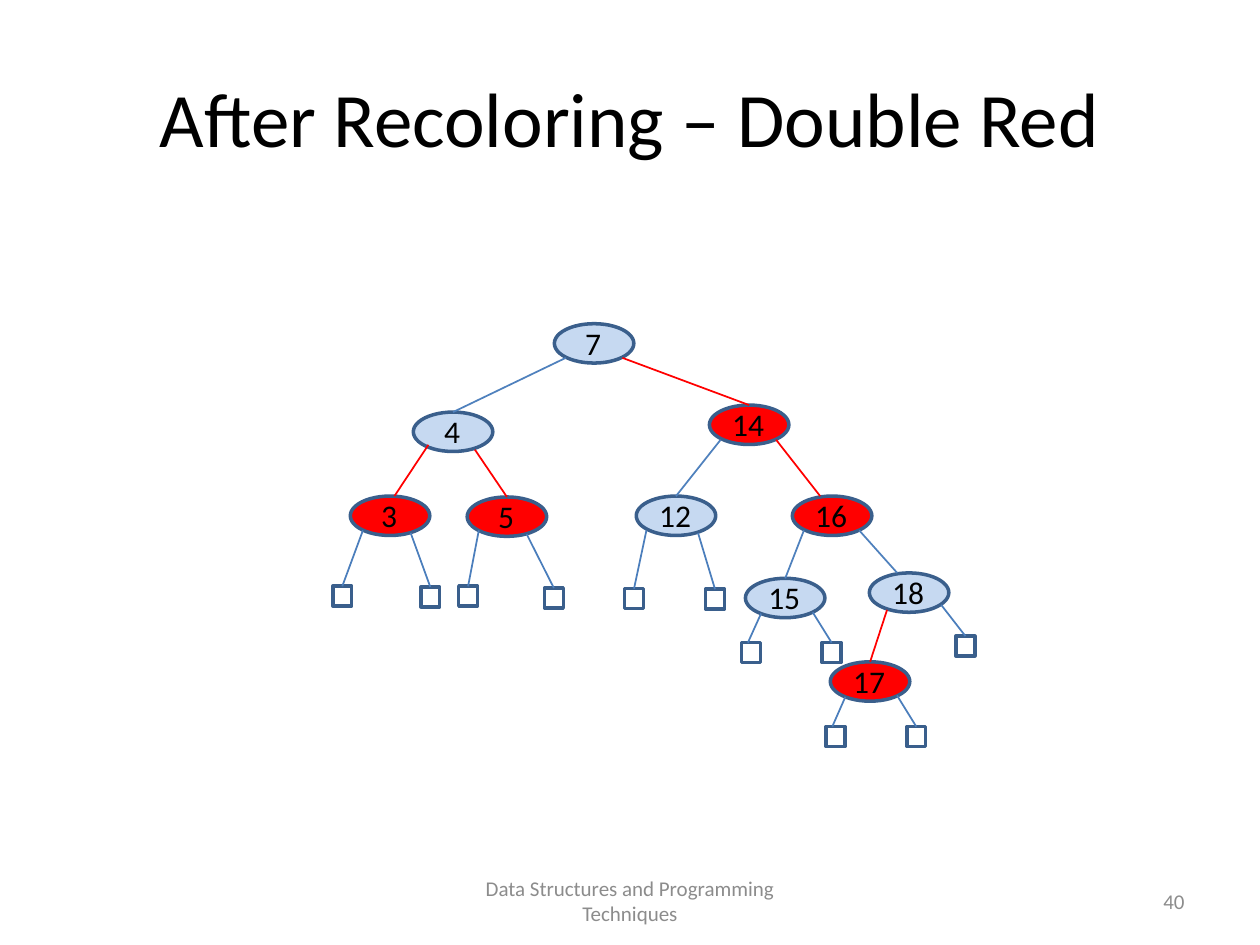
from pptx import Presentation
from pptx.dml.color import RGBColor
from pptx.enum.shapes import MSO_CONNECTOR, MSO_SHAPE
from pptx.enum.text import MSO_ANCHOR, MSO_AUTO_SIZE, PP_ALIGN
from pptx.oxml.ns import qn
from pptx.util import Pt
from lxml.etree import SubElement

BLACK = RGBColor(0x00, 0x00, 0x00)
GREY = RGBColor(0x8C, 0x8C, 0x8C)
RED = RGBColor(0xFF, 0x00, 0x00)
PALE = RGBColor(0xC6, 0xD9, 0xF1)
OUTLINE = RGBColor(0x3A, 0x5F, 0x8C)
NODE_EDGE = RGBColor(0x4F, 0x81, 0xBD)
LEAF_EDGE = RGBColor(0x4B, 0x7E, 0xBC)

NODE_SIZE = (45.4, 22.5)
LEAF_SIZE = (10.8, 11.4)
LABEL_SIZE = (35.3, 29)
LABEL_SHIFT = (4.5, -3.5)

NODES = {
    7: (316.8, 185), 4: (236.2, 235.5), 14: (405.4, 231.5),
    3: (200.2, 283.5), 5: (267, 284), 12: (363.6, 283.5), 16: (452.8, 283.5),
    15: (426, 330.5), 18: (496.8, 327.4), 17: (474.5, 378.2),
}
RED_NODES = {14, 3, 5, 16, 17}

# parent start point, child node, shift of the end from the child's top centre
NODE_LINKS = [
    ((323.3, 204.5), 4, 0), ((355.7, 204.5), 14, 0),
    ((244.8, 254.2), 3, 2.5), ((271.4, 257), 5, 0),
    ((411.8, 251.3), 12, 0), ((443.5, 251.3), 16, -6.8),
    ((459.4, 303.1), 15, 0), ((491, 303.1), 18, -6.8),
    ((506.9, 348.5), 17, 0),
]
LEAF_LINKS = [
    ((207.4, 303.1), (190.2, 335), 0), ((234.7, 304.6), (240.5, 335.4), 0),
    ((273.6, 303.1), (262.1, 335), 0), ((301, 305.3), (311.1, 336), 0),
    ((369.4, 303.1), (356.9, 336.4), 0), ((398.9, 304.6), (403.2, 336.7), 0),
    ((434.9, 350.6), (423.8, 367.2), -1.8), ((464.4, 349.9), (469.8, 367.2), 0),
    ((537.8, 345.6), (546.3, 363.5), 0),
    ((483.1, 398.2), (472, 415.2), -1.8), ((512.6, 397.4), (518.2, 415.2), 0),
]


def set_all(obj, values):
    for name, value in values.items():
        setattr(obj, name, value)


def write(sp, text, size, color, align, anchor):
    tf = sp.text_frame
    set_all(tf, {"word_wrap": True, "vertical_anchor": anchor})
    p = tf.paragraphs[0]
    p.alignment = align
    r = p.add_run()
    r.text = text
    set_all(r.font, {"name": "Calibri", "size": Pt(size)})
    r.font.color.rgb = color


def add_text(s, box, text, size, color, align, anchor=MSO_ANCHOR.MIDDLE):
    sp = s.shapes.add_textbox(*map(Pt, box))
    write(sp, text, size, color, align, anchor)
    return sp


def add_title(s, text):
    sp = s.shapes.title
    set_all(sp, {"left": Pt(36), "top": Pt(21.6), "width": Pt(648), "height": Pt(90)})
    write(sp, text, 44, BLACK, PP_ALIGN.CENTER, MSO_ANCHOR.MIDDLE)


def add_outlined(s, kind, at, size, fill=None):
    sp = s.shapes.add_shape(kind, *map(Pt, at + size))
    sp.shadow.inherit = False
    if fill is None:
        sp.fill.background()
    else:
        sp.fill.solid()
        sp.fill.fore_color.rgb = fill
    sp.line.color.rgb = OUTLINE
    sp.line.width = Pt(2)


def add_label(s, key):
    at = tuple(a + d for a, d in zip(NODES[key], LABEL_SHIFT))
    sp = add_text(s, at + LABEL_SIZE, str(key), 18, BLACK, PP_ALIGN.CENTER, MSO_ANCHOR.TOP)
    sp.text_frame.auto_size = MSO_AUTO_SIZE.SHAPE_TO_FIT_TEXT


def add_edge(s, start, child, width, shift, color):
    end = (child[0] + width / 2 + shift, child[1])
    sp = s.shapes.add_connector(MSO_CONNECTOR.STRAIGHT, *map(Pt, start + end))
    sp.line.color.rgb = color
    sp.line.width = Pt(1)
    SubElement(sp._element.spPr, qn("a:effectLst"))


def add_tree(s):
    for start, leaf, shift in LEAF_LINKS:
        add_outlined(s, MSO_SHAPE.RECTANGLE, leaf, LEAF_SIZE)
    for key, at in NODES.items():
        add_outlined(s, MSO_SHAPE.OVAL, at, NODE_SIZE, RED if key in RED_NODES else PALE)
    for start, leaf, shift in LEAF_LINKS:
        add_edge(s, start, leaf, LEAF_SIZE[0], shift, LEAF_EDGE)
    for start, key, shift in NODE_LINKS:
        color = RED if key in RED_NODES else NODE_EDGE
        add_edge(s, start, NODES[key], NODE_SIZE[0], shift, color)
    for key in NODES:
        add_label(s, key)


def main():
    prs = Presentation()
    set_all(prs, {"slide_width": Pt(720), "slide_height": Pt(540)})
    s = prs.slides.add_slide(prs.slide_layouts[5])
    add_title(s, "After Recoloring – Double Red")
    add_text(s, (246, 500.5, 228, 28.75), "Data Structures and Programming Techniques",
             12, GREY, PP_ALIGN.CENTER)
    add_text(s, (516, 500.5, 168, 28.75), "40", 12, GREY, PP_ALIGN.RIGHT)
    add_tree(s)
    prs.save("out.pptx")


if __name__ == "__main__":
    main()
